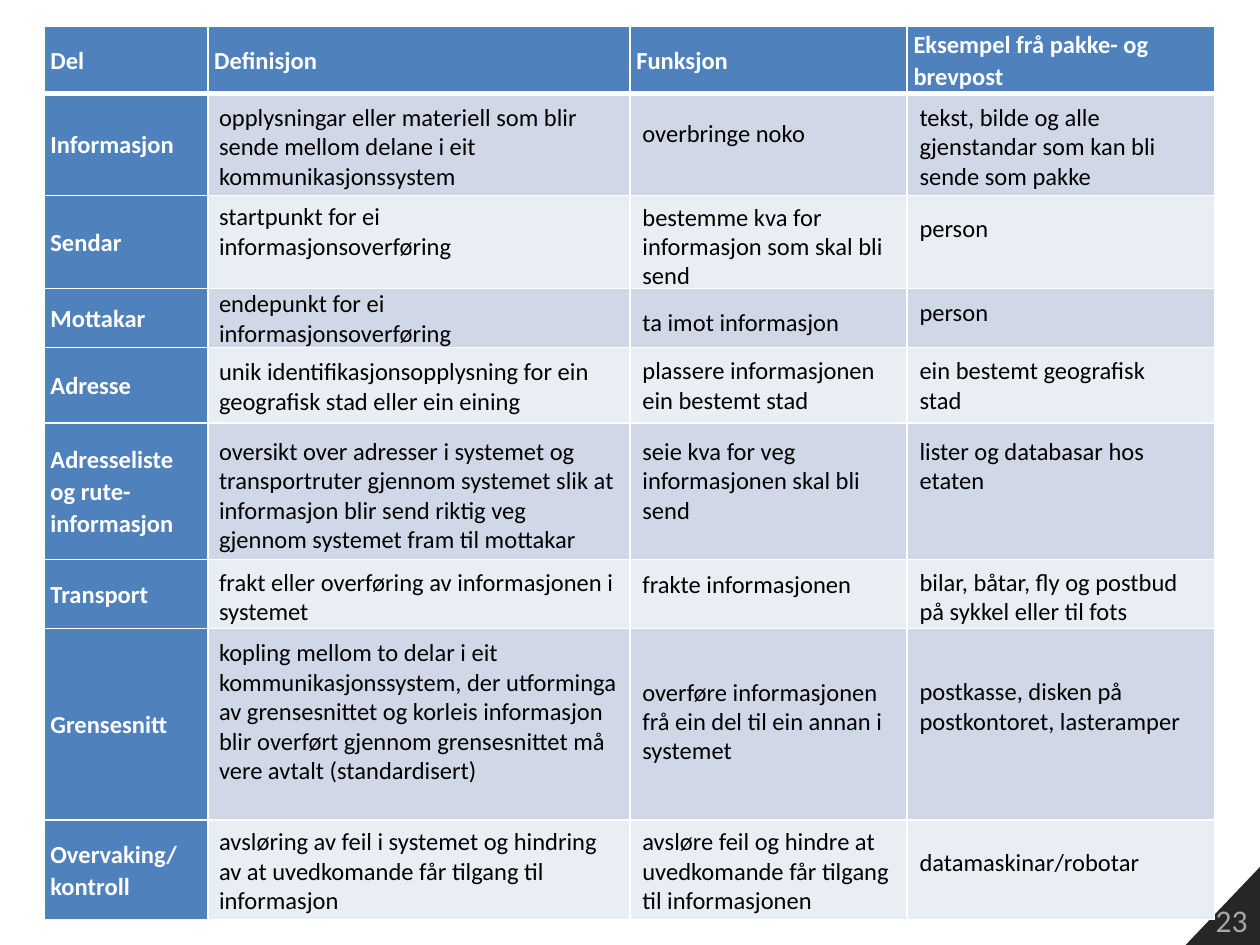
from typing import Any, NamedTuple

from lxml.etree import SubElement
from pptx import Presentation
from pptx.dml.color import RGBColor as RGB
from pptx.enum.text import MSO_ANCHOR as Anchor, MSO_AUTO_SIZE as Auto, PP_ALIGN as Align
from pptx.oxml.ns import qn
from pptx.util import Inches, Pt

BLUE, DARK, LIGHT, WHITE = "4F81BD", "D0D8E8", "E9EDF4", "FFFFFF"
COLS = [1.3, 3.35, 2.2, 2.44]
ROWS = [0.53, 0.81, 0.74, 0.47, 0.6, 1.08, 0.55, 1.52, 0.79]
HEADS = ["Del", "Definisjon", "Funksjon", "Eksempel frå pakke- og brevpost"]
PARTS = ["Informasjon", "Sendar", "Mottakar", "Adresse",
         "Adresseliste og rute-informasjon", "Transport", "Grensesnitt",
         "Overvaking/\nkontroll"]
CELL = {"margin_left": Inches(0.05), "margin_right": Inches(0.05),
        "margin_top": 0, "margin_bottom": 0, "vertical_anchor": Anchor.MIDDLE}
PARA = {"line_spacing": 1.07, "space_after": Pt(8)}
FRAME = {"word_wrap": True, "auto_size": Auto.SHAPE_TO_FIT_TEXT}
CORNER = {"word_wrap": True, "vertical_anchor": Anchor.BOTTOM}


class Note(NamedTuple):
    top: float
    width: float
    height: float
    text: str


# Notes of each column, keyed by the left edge
NOTES = {
    1.64: [
        Note(0.76, 3.36, 0.81, "opplysningar eller materiell som blir sende mellom "
             "delane i eit kommunikasjonssystem"),
        Note(1.55, 2.81, 0.57, "startpunkt for ei informasjonsoverføring"),
        Note(2.24, 2.81, 0.57, "endepunkt for ei informasjonsoverføring"),
        Note(2.78, 3.36, 0.57, "unik identifikasjonsopplysning for ein geografisk "
             "stad eller ein eining"),
        Note(3.41, 3.36, 1.04, "oversikt over adresser i systemet og transportruter "
             "gjennom systemet slik at informasjon blir send riktig veg gjennom "
             "systemet fram til mottakar"),
        Note(4.45, 3.36, 0.57, "frakt eller overføring av informasjonen i systemet"),
        Note(5.01, 3.36, 1.28, "kopling mellom to delar i eit kommunikasjonssystem, "
             "der utforminga av grensesnittet og korleis informasjon blir overført "
             "gjennom grensesnittet må vere avtalt (standardisert)"),
        Note(6.51, 3.36, 0.81, "avsløring av feil i systemet og hindring av at "
             "uvedkomande får tilgang til informasjon"),
    ],
    5.0: [
        Note(0.89, 1.95, 0.34, "overbringe noko"),
        Note(1.55, 2.28, 0.81, "bestemme kva for informasjon som skal bli send"),
        Note(2.39, 2.28, 0.34, "ta imot informasjon"),
        Note(2.77, 2.28, 0.57, "plassere informasjonen ein bestemt stad"),
        Note(3.41, 2.28, 0.81, "seie kva for veg informasjonen skal bli send"),
        Note(4.47, 2.28, 0.34, "frakte informasjonen"),
        Note(5.32, 2.17, 0.81, "overføre informasjonen frå ein del til ein annan "
             "i systemet"),
        Note(6.51, 2.17, 0.81, "avsløre feil og hindre at uvedkomande får tilgang "
             "til informasjonen"),
    ],
    7.2: [
        Note(0.76, 2.2, 0.81, "tekst, bilde og alle gjenstandar som kan bli sende "
             "som pakke"),
        Note(1.64, 1.94, 0.34, "person"),
        Note(2.31, 1.97, 0.34, "person"),
        Note(2.77, 2.2, 0.57, "ein bestemt geografisk stad"),
        Note(3.41, 2.53, 0.81, "lister og databasar hos etaten"),
        Note(4.45, 2.44, 0.57, "bilar, båtar, fly og postbud på sykkel eller til fots"),
        Note(5.32, 2.44, 0.57, "postkasse, disken på postkontoret, lasteramper"),
        Note(6.67, 2.44, 0.34, "datamaskinar/robotar"),
    ],
}


def apply(item: Any, style: dict) -> None:
    for name, value in style.items():
        setattr(item, name, value)


def paint(fill: Any, tint: str) -> None:
    fill.solid()
    fill.fore_color.rgb = RGB.from_string(tint)


def write(frame: Any, text: str, tint: str, size: int = 14, bold: bool = False) -> Any:
    """Fill the first paragraph and return it."""
    para = frame.paragraphs[0]
    para.text = text
    for run in para.runs:
        apply(run.font, {"name": "Calibri", "size": Pt(size), "bold": bold})
        run.font.color.rgb = RGB.from_string(tint)
    return para


def edge(cell: Any, row: int) -> None:
    """Draw white borders, thick between the header and the body."""
    props = cell._tc.get_or_add_tcPr()
    widths = {"lnL": 1, "lnR": 1, "lnT": 3 if row == 1 else 1,
              "lnB": 3 if row == 0 else 1}
    for tag, width in widths.items():
        line = SubElement(props, qn(f"a:{tag}"), w=str(Pt(width)))
        SubElement(SubElement(line, qn("a:solidFill")), qn("a:srgbClr"), val=WHITE)


def add_grid(slide: Any) -> None:
    grid = slide.shapes.add_table(len(ROWS), len(COLS), Inches(0.35), Inches(0.21),
                                  Inches(sum(COLS)), Inches(sum(ROWS))).table
    for col, width in zip(grid.columns, COLS):
        col.width = Inches(width)
    for r, height in enumerate(ROWS):
        grid.rows[r].height = Inches(height)
        texts = [PARTS[r - 1], "", "", ""] if r else HEADS
        for c, text in enumerate(texts):
            cell = grid.cell(r, c)
            apply(cell, CELL)
            edge(cell, r)
            paint(cell.fill, BLUE if text else DARK if r % 2 else LIGHT)
            if text:
                apply(write(cell.text_frame, text, WHITE, bold=True), PARA)


def add_note(slide: Any, left: float, note: Note) -> None:
    box = slide.shapes.add_textbox(Inches(left), Inches(note.top),
                                   Inches(note.width), Inches(note.height))
    apply(box.text_frame, FRAME)
    write(box.text_frame, note.text, "000000")


def add_corner(slide: Any) -> None:
    pen = slide.shapes.build_freeform(Inches(9.41), Inches(7.5))
    pen.add_line_segments([(Inches(10), Inches(6.88)), (Inches(10), Inches(7.5))])
    shape = pen.convert_to_shape()
    shape.shadow.inherit = False
    paint(shape.fill, "262626")
    shape.line.fill.background()
    apply(shape.text_frame, CORNER)
    write(shape.text_frame, "23", "A6A6A6", 18).alignment = Align.RIGHT


def main() -> None:
    deck = Presentation()
    apply(deck, {"slide_width": Inches(10), "slide_height": Inches(7.5)})
    slide = deck.slides.add_slide(deck.slide_layouts[6])
    add_corner(slide)
    add_grid(slide)
    for left, notes in NOTES.items():
        for note in notes:
            add_note(slide, left, note)
    deck.save("out.pptx")


if __name__ == "__main__":
    main()
